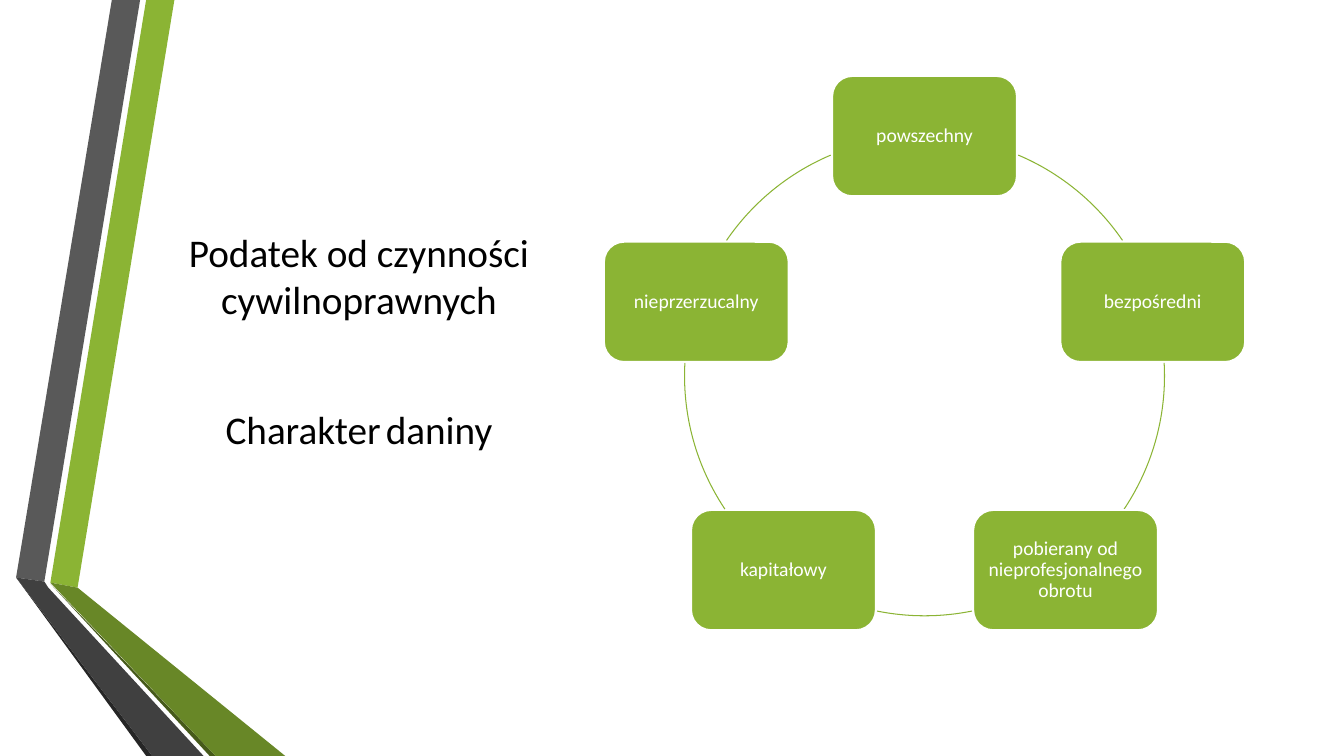
from math import cos, radians, sin
from typing import NamedTuple

from lxml import etree
from pptx import Presentation
from pptx.dml.color import RGBColor
from pptx.enum.shapes import MSO_SHAPE as Preset
from pptx.enum.text import MSO_ANCHOR as Anchor, MSO_AUTO_SIZE as AutoSize, PP_ALIGN as Align
from pptx.util import Inches, Pt

GREEN = "8BB434"
WHITE = "FFFFFF"
BLACK = "000000"
FONT = "Calibri"

CENTER_X, CENTER_Y, RADIUS = 9.17, 3.73, 2.38
BOX_WIDTH, BOX_HEIGHT = 1.83, 1.19


class Ribbon(NamedTuple):
    color: str
    points: list[tuple[float, float]]


class Feature(NamedTuple):
    label: str
    arc_start: float  # degrees clockwise from the right, arc to the next box
    arc_end: float


RIBBONS = [
    Ribbon(GREEN, [(0.5, 5.78), (0.77, 5.83), (1.73, 0), (1.45, 0)]),
    Ribbon("595959", [(1.39, 0), (1.11, 0), (0.16, 5.73), (0.44, 5.77)]),
    Ribbon("262626", [(0.16, 5.73), (1.45, 7.5), (1.51, 7.5)]),
    Ribbon("465A1A", [(0.5, 5.79), (2.08, 7.5), (2.14, 7.5)]),
    Ribbon("688727", [(0.5, 5.78), (2.14, 7.5), (2.83, 7.5), (0.77, 5.83)]),
    Ribbon("404040", [(2.02, 7.5), (0.48, 5.83), (0.44, 5.77), (0.16, 5.73), (1.51, 7.5)]),
]

FEATURES = [
    Feature("powszechny", 293, 325.6),
    Feature("bezpośredni", 356.9, 33.7),
    Feature("pobierany od nieprofesjonalnego obrotu", 78.6, 101.4),
    Feature("kapitałowy", 146.3, 183.1),
    Feature("nieprzerzucalny", 214.4, 247),
]


def rgb(color: str) -> RGBColor:
    return RGBColor.from_string(color)


def place(shape, left: float, top: float, width: float, height: float) -> None:
    shape.left, shape.top = Inches(left), Inches(top)
    shape.width, shape.height = Inches(width), Inches(height)


def write(shape, *runs: tuple[str, float], color: str = BLACK, anchor=Anchor.MIDDLE,
          inset: float | None = None, line_spacing: float = 1.0) -> None:
    """Fill a shape with one centred paragraph of (text, size) runs."""
    frame = shape.text_frame
    frame.word_wrap = True
    frame.auto_size = AutoSize.NONE
    frame.vertical_anchor = anchor
    if inset is not None:
        frame.margin_left = frame.margin_right = Inches(inset)
        frame.margin_top = frame.margin_bottom = Inches(inset)
    paragraph = frame.paragraphs[0]
    paragraph.alignment = Align.CENTER
    paragraph.line_spacing = line_spacing
    for text, size in runs:
        run = paragraph.add_run()
        run.text = text
        run.font.name = FONT
        run.font.size = Pt(size)
        run.font.color.rgb = rgb(color)


def draw_ribbon(slide, ribbon: Ribbon) -> None:
    corners = [(Inches(x), Inches(y)) for x, y in ribbon.points]
    builder = slide.shapes.build_freeform(*corners[0])
    builder.add_line_segments(corners[1:], close=True)
    shape = builder.convert_to_shape()
    shape.shadow.inherit = False
    shape.fill.solid()
    shape.fill.fore_color.rgb = rgb(ribbon.color)
    shape.line.fill.background()


def draw_box(slide, label: str, angle: float) -> None:
    left = CENTER_X + RADIUS * cos(radians(angle)) - BOX_WIDTH / 2
    top = CENTER_Y + RADIUS * sin(radians(angle)) - BOX_HEIGHT / 2
    box = slide.shapes.add_shape(Preset.ROUNDED_RECTANGLE, Inches(left), Inches(top),
                                 Inches(BOX_WIDTH), Inches(BOX_HEIGHT))
    box.shadow.inherit = False
    box.fill.solid()
    box.fill.fore_color.rgb = rgb(GREEN)
    box.line.color.rgb = rgb(WHITE)
    box.line.width = Pt(1.25)
    write(box, (label, 14), color=WHITE, inset=0.06, line_spacing=0.9)


def draw_arc(slide, start: float, end: float) -> None:
    arc = slide.shapes.add_shape(Preset.ARC, Inches(CENTER_X - RADIUS), Inches(CENTER_Y - RADIUS),
                                 Inches(2 * RADIUS), Inches(2 * RADIUS))
    arc.shadow.inherit = False
    arc.fill.background()
    arc.line.color.rgb = rgb(GREEN)
    arc.line.width = Pt(0.75)
    # Angles are stored in 1/60000 degree, adjustments in 1/100000
    arc.adjustments[0] = start * 0.6
    arc.adjustments[1] = end * 0.6


def main() -> None:
    presentation = Presentation()
    presentation.slide_width = Inches(13.33)
    presentation.slide_height = Inches(7.5)
    slide = presentation.slides.add_slide(presentation.slide_layouts[5])

    # Folded ribbons on the left
    for ribbon in RIBBONS:
        draw_ribbon(slide, ribbon)

    # Title and subtitle
    title = slide.shapes.title
    place(title, 1.62, 1.75, 3.88, 1.5)
    write(title, ("Podatek od czynności cywilnoprawnych", 28), anchor=Anchor.BOTTOM)
    subtitle = slide.shapes.add_textbox(Inches(1.62), Inches(3.25), Inches(3.88), Inches(2))
    write(subtitle, ("Charakter", 28), (" ", 16), ("daniny", 28))

    # Cycle of tax features, clockwise from the top
    step = 360 / len(FEATURES)
    for index, feature in enumerate(FEATURES):
        draw_box(slide, feature.label, index * step - 90)
        draw_arc(slide, feature.arc_start, feature.arc_end)

    presentation.save("out.pptx")


if __name__ == "__main__":
    main()
